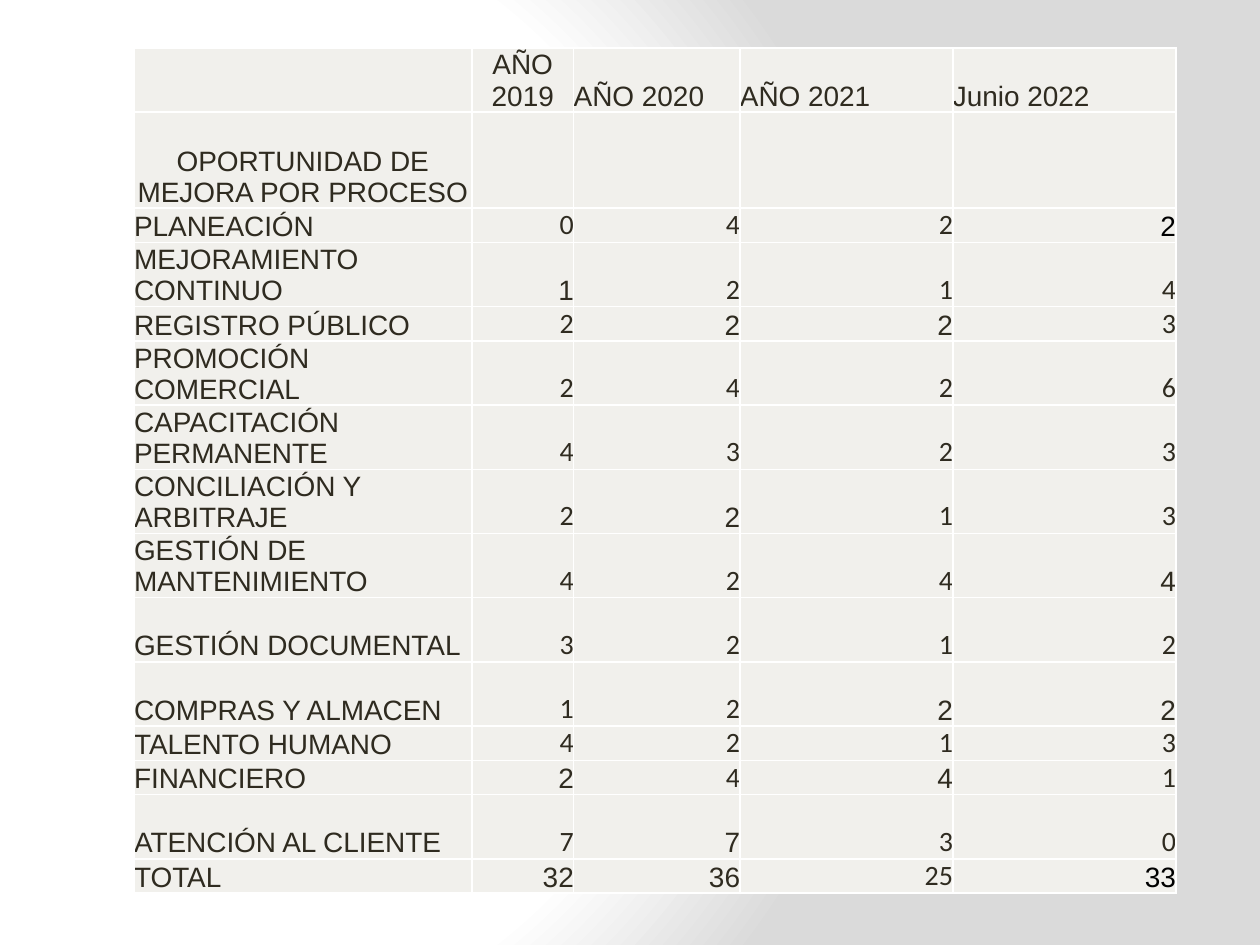
from pptx import Presentation
from pptx.dml.color import RGBColor
from pptx.enum.text import MSO_ANCHOR, PP_ALIGN
from pptx.oxml import parse_xml
from pptx.util import Pt

BOTTOM = MSO_ANCHOR.BOTTOM
LEFT, CENTER, RIGHT = PP_ALIGN.LEFT, PP_ALIGN.CENTER, PP_ALIGN.RIGHT

INK = RGBColor(0x2F, 0x2B, 0x20)
BLACK = RGBColor(0, 0, 0)
WHITE = RGBColor(0xFF, 0xFF, 0xFF)
GRAY = RGBColor(0xDA, 0xDA, 0xDA)
PAPER = RGBColor(0xF1, 0xF0, 0xEC)

NS = 'xmlns:a="http://schemas.openxmlformats.org/drawingml/2006/main"'
FONTS = {"A": "Arial", "C": "Calibri"}

HEADS = ["", "AÑO 2019", "AÑO 2020", "AÑO 2021", "Junio 2022"]
GROUP = ["OPORTUNIDAD DE MEJORA POR PROCESO", "", "", "", ""]
# Process, number of lines, counts per year, font of each count
DATA = [
    ("PLANEACIÓN", 1, (0, 4, 2, 2), "CCCA"),
    ("MEJORAMIENTO CONTINUO", 2, (1, 2, 1, 4), "ACCC"),
    ("REGISTRO PÚBLICO", 1, (2, 2, 2, 3), "CAAC"),
    ("PROMOCIÓN COMERCIAL", 2, (2, 4, 2, 6), "CCCC"),
    ("CAPACITACIÓN PERMANENTE", 2, (4, 3, 2, 3), "CCCC"),
    ("CONCILIACIÓN Y ARBITRAJE", 2, (2, 2, 1, 3), "CACC"),
    ("GESTIÓN DE MANTENIMIENTO", 2, (4, 2, 4, 4), "CCCA"),
    ("GESTIÓN DOCUMENTAL", 2, (3, 2, 1, 2), "CCCC"),
    ("COMPRAS Y ALMACEN", 2, (1, 2, 2, 2), "CCAA"),
    ("TALENTO HUMANO", 1, (4, 2, 1, 3), "CCCC"),
    ("FINANCIERO", 1, (2, 4, 4, 1), "ACAC"),
    ("ATENCIÓN AL CLIENTE", 2, (7, 7, 3, 0), "CACC"),
    ("TOTAL", 1, (32, 36, 25, 33), "AACA"),
]
HEIGHTS = {1: 18.25, 2: 36.7, 3: 55}
WIDTHS = [193, 58.3, 95, 121.7, 127.4]


def paint_back(slide):
    """Fill the background with a radial gradient."""
    slide.background.fill.solid()
    solid = next(slide.element.iter("{*}solidFill"))
    stops = "".join(
        f'<a:gs pos="{pos}000"><a:srgbClr val="{color}"/></a:gs>'
        for pos, color in ((0, WHITE), (75, WHITE), (100, GRAY)))
    grad = parse_xml(
        f'<a:gradFill {NS} rotWithShape="1"><a:gsLst>{stops}</a:gsLst>'
        '<a:path path="circle"><a:fillToRect l="20000" t="50000" '
        'r="100000" b="50000"/></a:path></a:gradFill>')
    solid.getparent().replace(solid, grad)


def add_rules(cell):
    """Draw a thin white line on each side of the cell."""
    props = cell._tc.get_or_add_tcPr()
    for spot, side in enumerate(("lnL", "lnR", "lnT", "lnB")):
        props.insert(spot, parse_xml(
            f'<a:{side} {NS} w="{Pt(1)}"><a:solidFill>'
            f'<a:srgbClr val="{WHITE}"/></a:solidFill></a:{side}>'))


def fill_cell(cell, text, align, font="Arial", color=INK):
    cell.margin_left = cell.margin_right = 0
    cell.margin_top = cell.margin_bottom = 0
    cell.vertical_anchor = BOTTOM
    cell.fill.solid()
    cell.fill.fore_color.rgb = PAPER
    add_rules(cell)
    cell.text = text
    para = cell.text_frame.paragraphs[0]
    para.alignment = align
    para.font.size = Pt(16)
    para.font.name = font
    para.font.color.rgb = color


def add_counts(slide, left, top, width, height):
    """Place the table of improvement counts."""
    lines = [2, 3] + [row[1] for row in DATA]
    table = slide.shapes.add_table(
        len(lines), len(WIDTHS), left, top, width, height).table
    table.first_row = table.horz_banding = False
    for col, size in zip(table.columns, WIDTHS):
        col.width = Pt(size)
    for row, count in zip(table.rows, lines):
        row.height = Pt(HEIGHTS[count])

    for col, text in enumerate(HEADS):
        fill_cell(table.cell(0, col), text, CENTER if col == 1 else LEFT)
    for col, text in enumerate(GROUP):
        fill_cell(table.cell(1, col), text, CENTER)
    for row, (name, _, counts, fonts) in enumerate(DATA, 2):
        fill_cell(table.cell(row, 0), name, LEFT)
        for col, (count, key) in enumerate(zip(counts, fonts), 1):
            dark = col == 4 and name in ("PLANEACIÓN", "TOTAL")
            fill_cell(table.cell(row, col), str(count), RIGHT,
                      FONTS[key], BLACK if dark else INK)


def main():
    deck = Presentation()
    deck.slide_width, deck.slide_height = Pt(720), Pt(540)
    slide = deck.slides.add_slide(deck.slide_layouts[6])
    paint_back(slide)
    add_counts(slide, Pt(76.6), Pt(27.3), Pt(595.4), Pt(484.6))
    deck.save("out.pptx")


if __name__ == "__main__":
    main()
